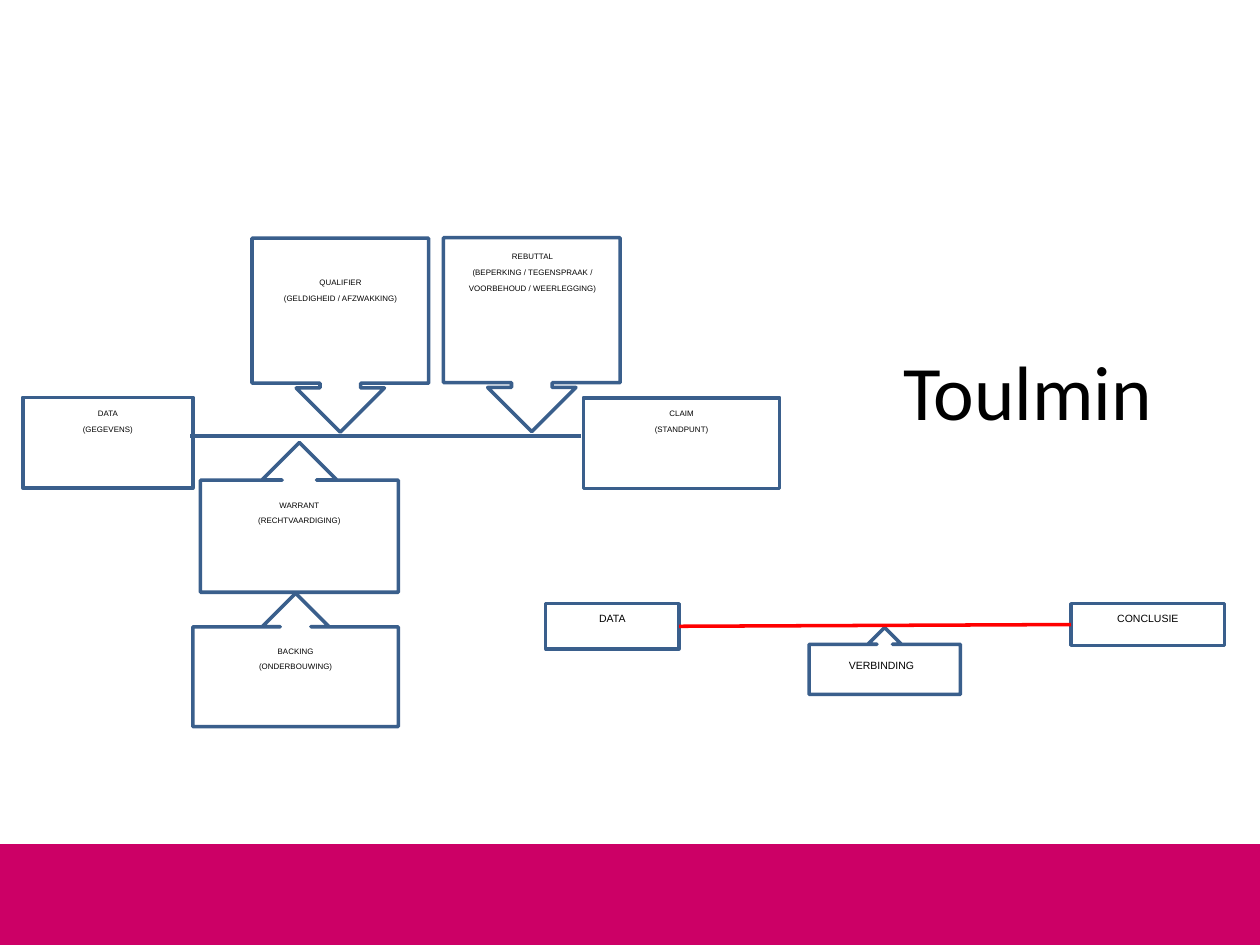
from pptx import Presentation
from pptx.dml.color import RGBColor
from pptx.enum.shapes import MSO_CONNECTOR as Link, MSO_SHAPE as Shape
from pptx.enum.text import MSO_ANCHOR as Anchor, PP_ALIGN as Align
from pptx.oxml.ns import qn
from pptx.util import Cm, Pt
from lxml.etree import SubElement

BLUE, RED, PINK, BLACK = "3A5F8C", "FF0000", "CC0066", "000000"
ADJUSTMENTS = (0.23, 0.25, 0.25, 0.748)
INSETS = {"margin_left": Cm(0.18), "margin_right": Cm(0.18),
          "margin_top": Cm(0.1), "margin_bottom": Cm(0.1)}

MODEL_BOXES = {
    "data": ((0.46, 8.01, 3.43, 1.83), ["DATA\v(GEGEVENS)"]),
    "claim": ((11.76, 8.02, 3.96, 1.83), ["CLAIM\v(STANDPUNT)"]),
}
MODEL_CALLOUTS = [
    ((5.08, 4.8, 3.56, 3.91), 180, (5.11, 5.38, 3.51, 2.18),
     ["QUALIFIER", "(GELDIGHEID / AFZWAKKING)"]),
    ((8.94, 4.79, 3.56, 3.91), 180, (8.97, 4.85, 3.53, 2.72),
     ["REBUTTAL", "(BEPERKING / TEGENSPRAAK / VOORBEHOUD / WEERLEGGING)"]),
    ((4.04, 8.92, 3.99, 3.02), 0, (3.61, 9.86, 4.85, 2.08),
     ["WARRANT", "(RECHTVAARDIGING)"]),
    ((3.89, 11.96, 4.14, 2.69), 0, (3.89, 12.8, 4.14, 1.83),
     ["BACKING", "(ONDERBOUWING)"]),
]
SUMMARY_BOXES = {
    "data": ((11, 12.17, 2.69, 0.91), ["DATA"]),
    "conclusion": ((21.59, 12.17, 3.1, 0.84), ["CONCLUSIE"]),
}
SUMMARY_CALLOUTS = [
    ((16.31, 12.65, 3.05, 1.35), 0, (16.31, 13.13, 2.92, 0.84), ["VERBINDING"]),
]


def color(value):
    return RGBColor.from_string(value)


def lengths(values):
    return [Cm(value) for value in values]


def assign(target, formats):
    for name, value in formats.items():
        setattr(target, name, value)


def write(box, lines, size, font, spacing=None, anchor=Anchor.TOP):
    frame = box.text_frame
    assign(frame, {"word_wrap": True, "vertical_anchor": anchor, **INSETS})
    frame.text = "\n".join(lines)
    for para in frame.paragraphs:
        assign(para, {"alignment": Align.CENTER, "line_spacing": spacing})
        for span in para.runs:
            assign(span.font, {"size": Pt(size), "name": font})
            span.font.color.rgb = color(BLACK)


def outline(shape, value):
    shape.line.color.rgb = color(value)
    shape.line.width = Pt(2)


def add_outlined(group, kind, place):
    shape = group.shapes.add_shape(kind, *lengths(place))
    shape.shadow.inherit = False
    shape.fill.background()
    outline(shape, BLUE)
    return shape


def add_line(group, ends, value):
    line = group.shapes.add_connector(Link.STRAIGHT, *lengths(ends))
    outline(line, value)
    SubElement(line._element.spPr, qn("a:effectLst"))
    return line


def add_diagram(page, boxes, callouts, size):
    group = page.shapes.add_group_shape()
    added = {}
    for name, (place, lines) in boxes.items():
        added[name] = add_outlined(group, Shape.RECTANGLE, place)
        write(added[name], lines, size, "Arial", Pt(9))
    for place, rotation, text_place, lines in callouts:
        callout = add_outlined(group, Shape.UP_ARROW_CALLOUT, place)
        callout.rotation = rotation
        for index, value in enumerate(ADJUSTMENTS):
            callout.adjustments[index] = value
        label = group.shapes.add_textbox(*lengths(text_place))
        write(label, lines, size, "Arial", Pt(9))
    return group, added


def main():
    deck = Presentation()
    deck.slide_width, deck.slide_height = lengths((25.4, 19.05))
    page = deck.slides.add_slide(deck.slide_layouts[6])

    band = page.shapes.add_shape(Shape.RECTANGLE, *lengths((0, 17.02, 25.4, 2.03)))
    band.shadow.inherit = False
    band.fill.solid()
    band.fill.fore_color.rgb = color(PINK)
    band.line.fill.background()

    title = page.shapes.add_textbox(*lengths((17.86, 6.48, 5.72, 2.77)))
    write(title, ["Toulmin"], 44, "Calibri", anchor=Anchor.MIDDLE)

    model, _ = add_diagram(page, MODEL_BOXES, MODEL_CALLOUTS, 4.5)
    add_line(model, (3.84, 8.79, 11.71, 8.79), BLUE)

    summary, boxes = add_diagram(page, SUMMARY_BOXES, SUMMARY_CALLOUTS, 6)
    link = add_line(summary, (13.69, 12.63, 21.59, 12.59), RED)
    link.begin_connect(boxes["data"], 3)
    link.end_connect(boxes["conclusion"], 1)

    deck.save("out.pptx")


if __name__ == "__main__":
    main()
